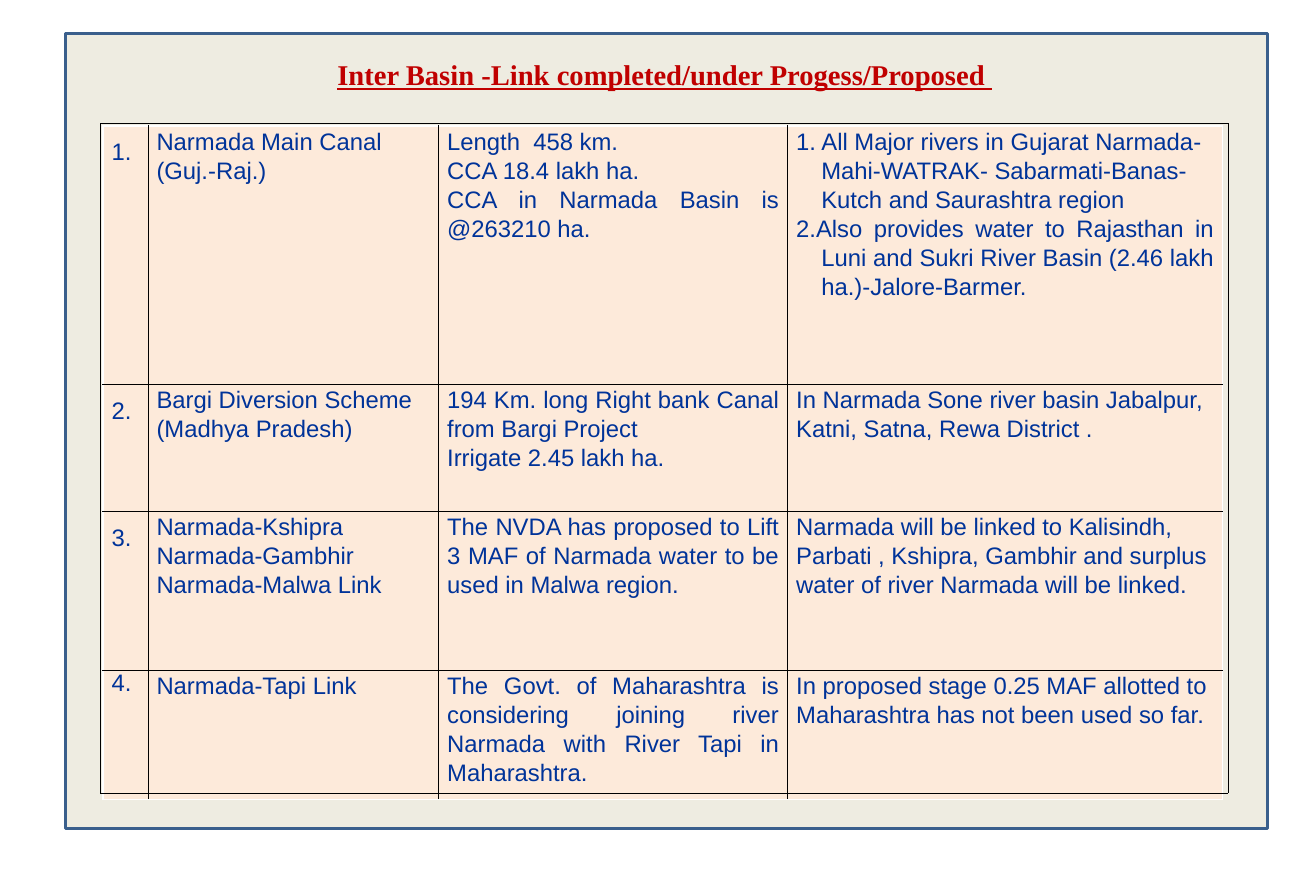
from lxml import etree
from pptx import Presentation
from pptx.dml.color import RGBColor
from pptx.enum.shapes import MSO_SHAPE
from pptx.enum.text import MSO_ANCHOR, PP_ALIGN
from pptx.oxml.ns import qn
from pptx.util import Pt

RECTANGLE = MSO_SHAPE.RECTANGLE
TOP = MSO_ANCHOR.TOP
LEFT, CENTER, JUSTIFY = PP_ALIGN.LEFT, PP_ALIGN.CENTER, PP_ALIGN.JUSTIFY

COLORS = {
    "panel": "EEECE1", "panel_line": "3A5F8C", "title": "C00000",
    "text": "003399", "cell": "FDEADA", "grid": "000000", "edge": "FFFFFF",
}


def color(name):
    return RGBColor.from_string(COLORS[name])


def set_borders(cell, borders):
    """Add borders, given as colour and width in left, right, top, bottom order."""
    properties = cell._tc.get_or_add_tcPr()
    for index, (side, (name, width)) in enumerate(zip("LRTB", borders)):
        line = etree.Element(qn(f"a:ln{side}"), w=str(Pt(width)))
        fill = etree.SubElement(line, qn("a:solidFill"))
        etree.SubElement(fill, qn("a:srgbClr"), val=COLORS[name])
        properties.insert(index, line)


deck = Presentation()
deck.slide_width, deck.slide_height = Pt(828), Pt(554.4)
page = deck.slides.add_slide(deck.slide_layouts[5])

# Title
title = page.shapes.title
title.left, title.top, title.width, title.height = Pt(96.5), Pt(32.4), Pt(643.7), Pt(52.6)
frame = title.text_frame
frame.text = "Inter Basin -Link completed/under Progess/Proposed "
frame.vertical_anchor = TOP
frame.word_wrap = True
para = frame.paragraphs[0]
para.alignment = CENTER
font = para.runs[0].font
font.name, font.size, font.bold, font.underline = "Times New Roman", Pt(18), True, True
font.color.rgb = color("title")

# Panel behind the title
panel = page.shapes.add_shape(RECTANGLE, Pt(41), Pt(20.9), Pt(756.7), Pt(500.4))
panel.shadow.inherit = False
panel.fill.solid()
panel.fill.fore_color.rgb = color("panel")
panel.line.color.rgb = color("panel_line")
panel.line.width = Pt(2)
title.element.addprevious(panel.element)

# Links table: number, name, facts, basins served
links = [
    ("1.",
     "Narmada Main Canal\n(Guj.-Raj.)",
     "Length  458 km.\nCCA 18.4 lakh ha.\nCCA in Narmada Basin is @263210 ha.",
     "1. All Major rivers in Gujarat Narmada-Mahi-WATRAK- Sabarmati-Banas-Kutch "
     "and Saurashtra region\n"
     "2.Also provides water to Rajasthan in Luni and Sukri River Basin "
     "(2.46 lakh ha.)-Jalore-Barmer."),
    ("2.",
     "Bargi Diversion Scheme (Madhya Pradesh)",
     "194 Km. long Right bank Canal from Bargi Project\nIrrigate 2.45 lakh ha.",
     "In Narmada Sone river basin Jabalpur, Katni, Satna, Rewa District ."),
    ("3.",
     "Narmada-Kshipra\nNarmada-Gambhir\nNarmada-Malwa Link",
     "The NVDA has proposed to Lift 3 MAF of Narmada water to be used in Malwa region.",
     "Narmada will be linked to Kalisindh, Parbati , Kshipra, Gambhir and surplus "
     "water of river Narmada will be linked."),
    ("4.",
     "Narmada-Tapi Link",
     "The Govt. of Maharashtra is considering joining river Narmada with River Tapi "
     "in Maharashtra.",
     "In proposed stage 0.25 MAF allotted to Maharashtra has not been used so far. "),
]
column_widths = [28.3, 182.9, 219.6, 273.6]
row_heights = [162.7, 79.9, 100.1, 81.4]
alignments = [JUSTIFY, LEFT, JUSTIFY, LEFT]
number_spacing = [1.5, 1.5, 1.5, 1.0]
grid, edge = ("grid", 0.5), ("edge", 1)

table = page.shapes.add_table(4, 4, Pt(64.8), Pt(79.2), Pt(704.4), Pt(424.1)).table
table.first_row = table.horz_banding = False
for column, width in zip(table.columns, column_widths):
    column.width = Pt(width)
for row, height in zip(table.rows, row_heights):
    row.height = Pt(height)

for r, link in enumerate(links):
    for c, text in enumerate(link):
        cell = table.cell(r, c)
        cell.margin_left = cell.margin_right = Pt(5.4)
        cell.margin_top = cell.margin_bottom = 0
        cell.fill.solid()
        cell.fill.fore_color.rgb = color("cell")
        set_borders(cell, [edge if outer else grid for outer in (c == 0, c == 3, r == 0, r == 3)])
        cell.text_frame.text = text
        for para in cell.text_frame.paragraphs:
            para.alignment = alignments[c]
            para.line_spacing = number_spacing[r] if c == 0 else 1.1
            font = para.runs[0].font
            font.name, font.size = "Arial", Pt(15)
            font.color.rgb = color("text")

# Hanging indents for the numbered basins
basins = table.cell(0, 3).text_frame.paragraphs
basins[1].alignment = JUSTIFY
for para in basins:
    properties = para._p.get_or_add_pPr()
    properties.set("marL", str(Pt(15.8)))
    properties.set("indent", str(-Pt(15.8)))

# Single-cell table that frames the links
outline = page.shapes.add_table(1, 1, Pt(63.4), Pt(77.8), Pt(709.2), Pt(421.2)).table
outline.first_row = outline.horz_banding = False
outline.cell(0, 0).fill.background()
set_borders(outline.cell(0, 0), [grid] * 4)

deck.save("out.pptx")
